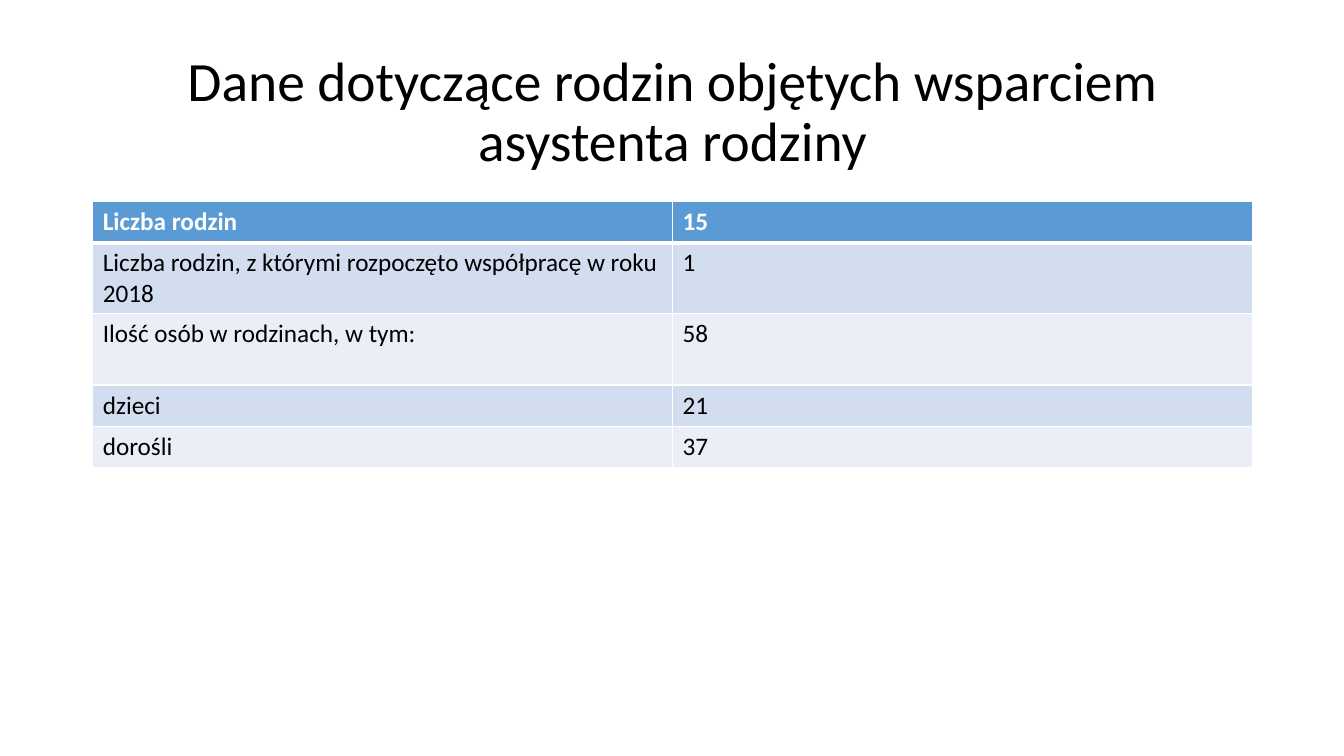
import pptx
import pptx.dml.color
import pptx.enum.text
import pptx.oxml
import pptx.util

THEME = {
    "font": "Calibri",
    "title_size": 39.6,
    "cell_size": 18,
    "text": "000000",
    "header_text": "FFFFFF",
    "header_fill": "5B9BD5",
    "bands": ["D2DEEF", "EAEFF7"],
    "border": "FFFFFF",
}
FAMILY_DATA = [
    ("Liczba rodzin", "15", 0.41),
    ("Liczba rodzin, z którymi rozpoczęto współpracę w roku 2018", "1", 0.7),
    ("Ilość osób w rodzinach, w tym:", "58", 0.71),
    ("dzieci", "21", 0.41),
    ("dorośli", "37", 0.41),
]
MARGIN, CONTENT_WIDTH = 0.92, 11.5


def style_text(paragraph, size, color, bold=False):
    for run in paragraph.runs:
        run.font.name = THEME["font"]
        run.font.size = pptx.util.Pt(size)
        run.font.bold = bold
        run.font.color.rgb = pptx.dml.color.RGBColor.from_string(color)


def add_borders(cell, bottom_width):
    """Outline a cell with 1 pt lines and a bottom line of the given points."""
    properties = cell._tc.get_or_add_tcPr()
    widths = {"lnL": 1, "lnR": 1, "lnT": 1, "lnB": bottom_width}
    for position, (side, width) in enumerate(widths.items()):
        line = pptx.oxml.parse_xml(
            f'<a:{side} xmlns:a="http://schemas.openxmlformats.org/drawingml/2006/main" '
            f'w="{pptx.util.Pt(width)}"><a:solidFill>'
            f'<a:srgbClr val="{THEME["border"]}"/></a:solidFill></a:{side}>'
        )
        properties.insert(position, line)


deck = pptx.Presentation()
deck.slide_width = pptx.util.Inches(13.33)
deck.slide_height = pptx.util.Inches(7.5)
slide = deck.slides.add_slide(deck.slide_layouts[6])

left, width = pptx.util.Inches(MARGIN), pptx.util.Inches(CONTENT_WIDTH)
title = slide.shapes.add_textbox(
    left, pptx.util.Inches(0.4), width, pptx.util.Inches(1.45)
).text_frame
title.word_wrap = True
title.vertical_anchor = pptx.enum.text.MSO_ANCHOR.MIDDLE
title.text = "Dane dotyczące rodzin objętych wsparciem asystenta rodziny"
heading = title.paragraphs[0]
heading.alignment = pptx.enum.text.PP_ALIGN.CENTER
heading.line_spacing = 0.9
style_text(heading, THEME["title_size"], THEME["text"])

table_height = sum(height for label, value, height in FAMILY_DATA)
families = slide.shapes.add_table(
    len(FAMILY_DATA), 2, left, pptx.util.Inches(2), width, pptx.util.Inches(table_height)
).table
for row, (label, value, height) in enumerate(FAMILY_DATA):
    families.rows[row].height = pptx.util.Inches(height)
    is_header = row == 0
    fill = THEME["header_fill"] if is_header else THEME["bands"][(row - 1) % 2]
    color = THEME["header_text"] if is_header else THEME["text"]
    for column, content in enumerate((label, value)):
        cell = families.cell(row, column)
        cell.text_frame.text = content
        style_text(cell.text_frame.paragraphs[0], THEME["cell_size"], color, is_header)
        cell.fill.solid()
        cell.fill.fore_color.rgb = pptx.dml.color.RGBColor.from_string(fill)
        add_borders(cell, 3 if is_header else 1)

deck.save("out.pptx")
